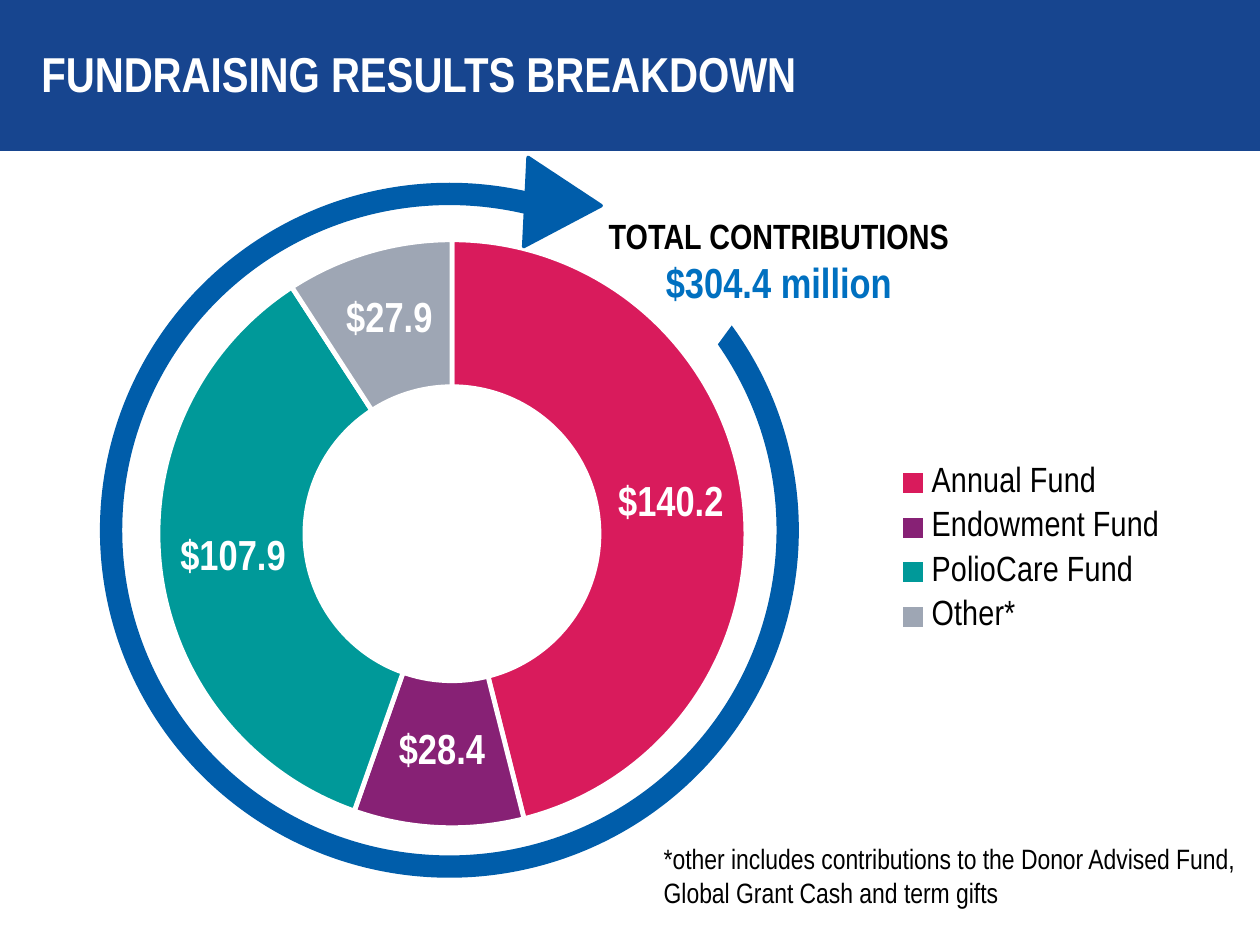
"""Build the fundraising results slide with its doughnut chart."""
from lxml.etree import SubElement
from pptx import Presentation
from pptx.chart.data import CategoryChartData
from pptx.dml.color import RGBColor
from pptx.enum.chart import XL_CHART_TYPE, XL_LEGEND_POSITION
from pptx.enum.shapes import MSO_SHAPE
from pptx.enum.text import MSO_ANCHOR, PP_ALIGN
from pptx.oxml.ns import qn
from pptx.util import Cm, Pt

FONT = "Arial Narrow"
NAVY = RGBColor(0x17, 0x45, 0x8F)
BLUE = RGBColor(0x00, 0x5D, 0xAA)
SKY = RGBColor(0x00, 0x70, 0xC0)
WHITE = RGBColor(0xFF, 0xFF, 0xFF)
BLACK = RGBColor(0, 0, 0)
PINK = RGBColor(0xD9, 0x1B, 0x5C)
PLUM = RGBColor(0x87, 0x21, 0x75)
TEAL = RGBColor(0x00, 0x99, 0x99)
GRAY = RGBColor(0x9E, 0xA6, 0xB4)

TITLE = "FUNDRAISING RESULTS BREAKDOWN"
FUNDS = [
    ("Annual Fund", 140.2, PINK),
    ("Endowment Fund", 28.4, PLUM),
    ("PolioCare Fund", 107.9, TEAL),
    ("Other*", 27.9, GRAY),
]
TOTAL = [("TOTAL CONTRIBUTIONS", 20, BLACK), ("$304.4 million", 24, SKY)]
NOTE = ("*other includes contributions to the Donor Advised Fund,\v"
        "Global Grant Cash and term gifts")

AREA = {
    "band": (0, 0, 25.4, 3.02),
    "title": (0.58, 0.74, 23.16, 1.45),
    "note": (13.13, 16.84, 12.27, 1.63),
    "chart": (2.03, 4.52, 22.2, 14.12),
    "ring": (2.24, 3.91, 13.64, 13.56),
    "gap": (11.3, 4.24, 4.01, 1.8),
    "head": (10.46, 3.35, 1.8, 1.52),
    "total": (11.79, 4.19, 7.82, 2.13),
}
PLOT = {"x": 0.052, "y": 0.022, "w": 0.534, "h": 0.84}
KEY = {"x": 0.705, "y": 0.33, "w": 0.28, "h": 0.27}


def area(name):
    return [Cm(n) for n in AREA[name]]


def style(font, size, color, bold=False):
    font.name, font.size, font.bold = FONT, Pt(size), bold
    font.color.rgb = color


def write(para, text, size=16, color=BLACK, bold=False, align=PP_ALIGN.LEFT):
    para.alignment = align
    run = para.add_run() if "\v" not in text else None
    if run:
        run.text = text
    else:
        para.text = text
    for run in para.runs:
        style(run.font, size, color, bold)


def draw(slide, kind, name, fill=None, line=None, width=2, turn=0):
    shape = slide.shapes.add_shape(kind, *area(name))
    shape.shadow.inherit = False
    shape.rotation = turn
    if fill is None:
        shape.fill.background()
    else:
        shape.fill.solid()
        shape.fill.fore_color.rgb = fill
    if line is None:
        shape.line.fill.background()
    else:
        shape.line.color.rgb = line
        shape.line.width = Pt(width)
    return shape


def label(slide, name):
    frame = slide.shapes.add_textbox(*area(name)).text_frame
    frame.word_wrap = True
    return frame


def place(node, spot, index, inner=False):
    for old in node.findall(qn("c:layout")):
        node.remove(old)
    layout = SubElement(node, qn("c:layout"))
    node.insert(index, layout)
    manual = SubElement(layout, qn("c:manualLayout"))
    if inner:
        SubElement(manual, qn("c:layoutTarget")).set("val", "inner")
    for side in "xy":
        SubElement(manual, qn(f"c:{side}Mode")).set("val", "edge")
    for side, value in spot.items():
        SubElement(manual, qn(f"c:{side}")).set("val", str(value))


def add_funds(slide):
    names, values, colors = zip(*FUNDS)
    data = CategoryChartData()
    data.categories = names
    data.add_series("Series 1", values)
    chart = slide.shapes.add_chart(
        XL_CHART_TYPE.DOUGHNUT, *area("chart"), data).chart
    chart.has_title = False
    style(chart.font, 18, BLACK)
    chart.has_legend = True
    legend = chart.legend
    legend.position = XL_LEGEND_POSITION.RIGHT
    legend.include_in_layout = False
    style(legend.font, 20, BLACK)
    plot = chart.plots[0]
    plot.vary_by_categories = True
    series = plot.series[0]
    for index, color in enumerate(colors):
        form = series.points[index].format
        form.fill.solid()
        form.fill.fore_color.rgb = color
        form.line.color.rgb = WHITE
        form.line.width = Pt(2.75)
    marks = series.data_labels
    marks.show_value = True
    marks.number_format = '"$"#,##0.0'
    marks.number_format_is_linked = False
    style(marks.font, 24, WHITE, True)
    root = chart.element
    next(root.iter(qn("c:holeSize"))).set("val", "23")
    place(next(root.iter(qn("c:plotArea"))), PLOT, 0, True)
    place(next(root.iter(qn("c:legend"))), KEY, 1)


def main():
    deck = Presentation()
    deck.slide_width, deck.slide_height = Cm(25.4), Cm(19.05)
    slide = deck.slides.add_slide(deck.slide_layouts[5])
    title = slide.shapes.title
    band = draw(slide, MSO_SHAPE.RECTANGLE, "band", NAVY, NAVY)
    title.element.addprevious(band.element)
    title.left, title.top, title.width, title.height = area("title")
    title.text_frame.vertical_anchor = MSO_ANCHOR.MIDDLE
    write(title.text_frame.paragraphs[0], TITLE, size=28, color=WHITE, bold=True)

    write(label(slide, "note").paragraphs[0], NOTE)
    add_funds(slide)
    draw(slide, MSO_SHAPE.OVAL, "ring", line=BLUE, width=12.75)
    draw(slide, MSO_SHAPE.RECTANGLE, "gap", WHITE, turn=36.3)
    draw(slide, MSO_SHAPE.ISOSCELES_TRIANGLE, "head", BLUE, BLUE, turn=92.8)

    frame = label(slide, "total")
    for index, (text, size, color) in enumerate(TOTAL):
        para = frame.add_paragraph() if index else frame.paragraphs[0]
        write(para, text, size=size, color=color, bold=True,
              align=PP_ALIGN.CENTER)
    deck.save("out.pptx")


if __name__ == "__main__":
    main()
